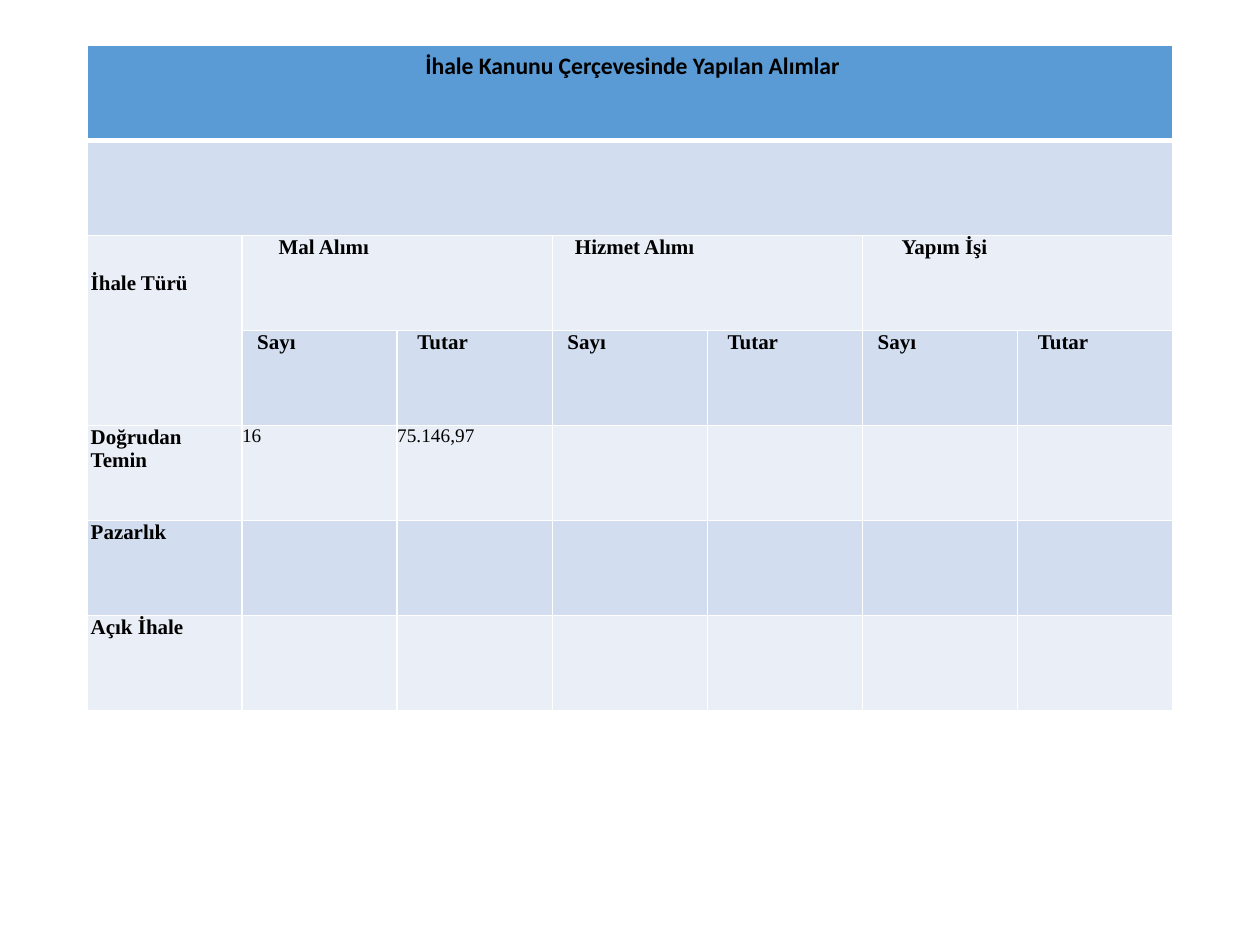
import pptx
import pptx.dml.color
import pptx.enum.text
import pptx.oxml
import pptx.oxml.ns
import pptx.util
from dataclasses import dataclass

Inches, Pt = pptx.util.Inches, pptx.util.Pt


@dataclass(frozen=True)
class Theme:
    head: str = "5B9BD5"
    dark: str = "D2DEEF"
    light: str = "EAEFF7"
    line: str = "FFFFFF"
    ink: str = "000000"
    sans: str = "Calibri"
    serif: str = "Times New Roman"
    title: float = 13.5
    label: float = 12
    value: float = 11
    thin: float = 1
    thick: float = 3


@dataclass(frozen=True)
class Entry:
    row: int
    col: int
    text: str
    indent: float = 0
    before: float = 0
    bold: bool = True
    top: float = 0
    rows: int = 1
    cols: int = 1


THEME = Theme()
WIDE, HIGH = 10, 7.5
ROWS = COLS = 7
LEFT, TOP, SPAN, DEPTH = 0.069, 0.048, 0.862, 0.704  # shares of the slide

# Column groups: name and indent, each over a count and an amount
GROUPS = [("Mal Alımı", 0.29), ("Hizmet Alımı", 0.18), ("Yapım İşi", 0.31)]
KINDS = ["Doğrudan Temin", "Pazarlık", "Açık İhale"]
VALUES = ["16", "75.146,97"]


def list_entries() -> list[Entry]:
    found = [Entry(2, 0, "İhale Türü", 0.03, top=0.29, rows=2)]
    for i, (name, indent) in enumerate(GROUPS):
        col = 1 + 2 * i
        found += [
            Entry(2, col, name, indent, 1.7, cols=2),
            Entry(3, col, "Sayı", 0.12, 1.7),
            Entry(3, col + 1, "Tutar", 0.16, 1.7),
        ]
    found += [Entry(4 + i, 0, kind, 0.03, 3.5) for i, kind in enumerate(KINDS)]
    found += [Entry(4, 1 + i, text, bold=False) for i, text in enumerate(VALUES)]
    return found


def set_font(para, face: str, size: float, bold: bool) -> None:
    for run in para.runs:
        run.font.name, run.font.size, run.font.bold = face, Pt(size), bold
        run.font.color.rgb = pptx.dml.color.RGBColor.from_string(THEME.ink)


def set_edges(cell, row: int) -> None:
    widths = dict.fromkeys(("lnL", "lnR", "lnT", "lnB"), THEME.thin)
    if row == 0:
        widths["lnB"] = THEME.thick
    elif row == 1:
        widths["lnT"] = THEME.thick
    props = cell._tc.get_or_add_tcPr()
    for i, (tag, width) in enumerate(widths.items()):
        props.insert(i, pptx.oxml.parse_xml(
            f'<a:{tag} {pptx.oxml.ns.nsdecls("a")} w="{Pt(width)}">'
            f'<a:solidFill><a:srgbClr val="{THEME.line}"/></a:solidFill></a:{tag}>'))


def paint_cells(table) -> None:
    for r in range(ROWS):
        for c in range(COLS):
            cell = table.cell(r, c)
            color = THEME.dark if r % 2 else THEME.light
            if r == 0:
                color = THEME.head
            elif (r, c) == (3, 0):
                color = THEME.light  # lower half of the merged label
            cell.fill.solid()
            cell.fill.fore_color.rgb = pptx.dml.color.RGBColor.from_string(color)
            set_edges(cell, r)


def write_entry(table, entry: Entry) -> None:
    cell = table.cell(entry.row, entry.col)
    if entry.rows * entry.cols > 1:
        cell.merge(table.cell(entry.row + entry.rows - 1, entry.col + entry.cols - 1))
    cell.margin_left = cell.margin_right = cell.margin_bottom = 0
    cell.margin_top = Inches(entry.top)
    cell.text_frame.text = entry.text
    para = cell.text_frame.paragraphs[0]
    para.space_before = Pt(entry.before)
    para._p.get_or_add_pPr().set("marL", str(Inches(entry.indent)))
    set_font(para, THEME.serif, THEME.label if entry.bold else THEME.value, entry.bold)


def main() -> None:
    deck = pptx.Presentation()
    deck.slide_width, deck.slide_height = Inches(WIDE), Inches(HIGH)
    slide = deck.slides.add_slide(deck.slide_layouts[6])

    # Table grid
    table = slide.shapes.add_table(
        ROWS, COLS, Inches(LEFT * WIDE), Inches(TOP * HIGH),
        Inches(SPAN * WIDE), Inches(DEPTH * HIGH)).table
    table.first_row = table.horz_banding = False
    paint_cells(table)

    # Title row and empty row across all columns
    for r in range(2):
        table.cell(r, 0).merge(table.cell(r, COLS - 1))
    frame = table.cell(0, 0).text_frame
    frame.text = " İhale Kanunu Çerçevesinde Yapılan Alımlar"
    frame.paragraphs[0].alignment = pptx.enum.text.PP_ALIGN.CENTER
    set_font(frame.paragraphs[0], THEME.sans, THEME.title, True)

    # Headings, labels and values
    for entry in list_entries():
        write_entry(table, entry)
    deck.save("out.pptx")


if __name__ == "__main__":
    main()
